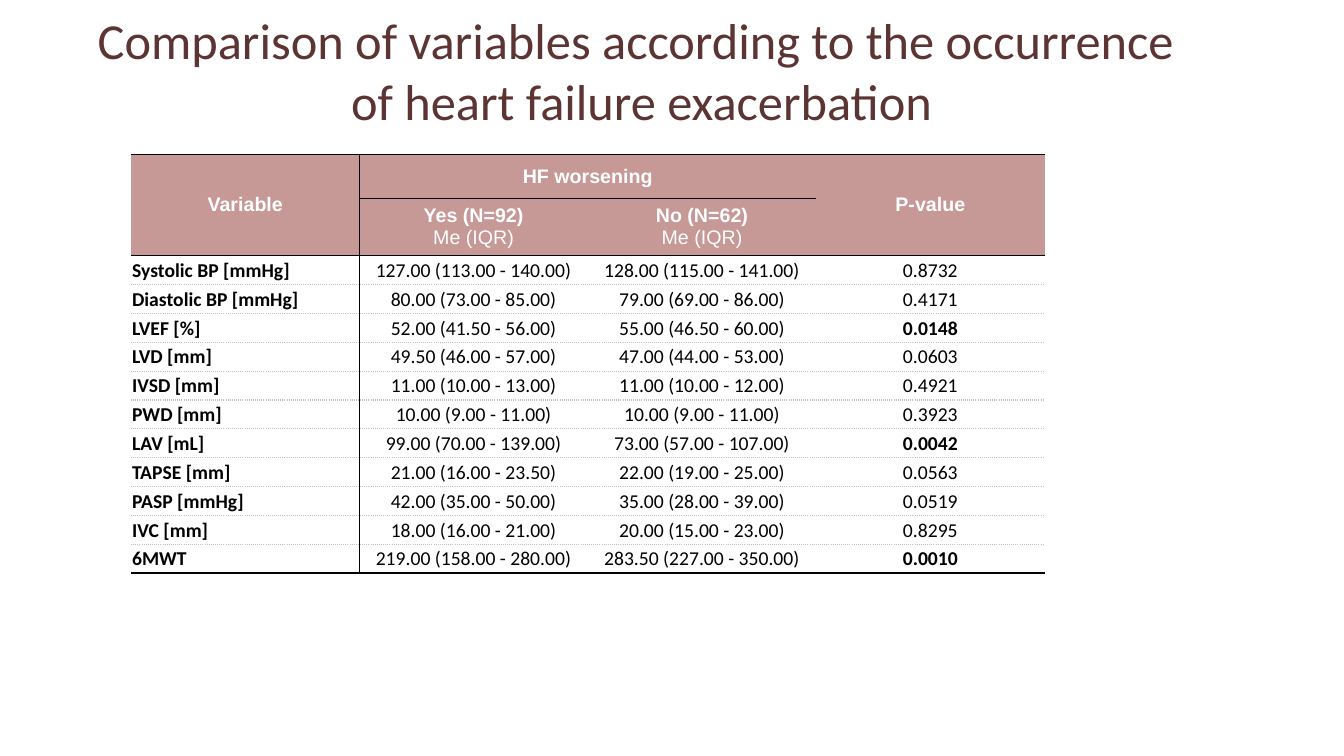
from lxml.etree import SubElement
from pptx import Presentation
from pptx.dml.color import RGBColor
from pptx.enum.text import MSO_ANCHOR, PP_ALIGN
from pptx.oxml import parse_xml
from pptx.oxml.ns import nsdecls, qn
from pptx.util import Inches, Pt

# Content
TITLE = ("Comparison of variables according to the occurrence \v"
         "of heart failure exacerbation")
HEAD = [
    ["Variable", "HF worsening", "", "P-value"],
    ["", "Yes (N=92)\nMe (IQR)", "No (N=62)\nMe (IQR)", ""],
]
MERGES = [((0, 0), (1, 0)), ((0, 1), (0, 2)), ((0, 3), (1, 3))]
BODY = [
    ["Systolic BP [mmHg]", "127.00 (113.00 - 140.00)", "128.00 (115.00 - 141.00)", "0.8732"],
    ["Diastolic BP [mmHg]", "80.00 (73.00 - 85.00)", "79.00 (69.00 - 86.00)", "0.4171"],
    ["LVEF [%]", "52.00 (41.50 - 56.00)", "55.00 (46.50 - 60.00)", "0.0148"],
    ["LVD [mm]", "49.50 (46.00 - 57.00)", "47.00 (44.00 - 53.00)", "0.0603"],
    ["IVSD [mm]", "11.00 (10.00 - 13.00)", "11.00 (10.00 - 12.00)", "0.4921"],
    ["PWD [mm]", "10.00 (9.00 - 11.00)", "10.00 (9.00 - 11.00)", "0.3923"],
    ["LAV [mL]", "99.00 (70.00 - 139.00)", "73.00 (57.00 - 107.00)", "0.0042"],
    ["TAPSE [mm]", "21.00 (16.00 - 23.50)", "22.00 (19.00 - 25.00)", "0.0563"],
    ["PASP [mmHg]", "42.00 (35.00 - 50.00)", "35.00 (28.00 - 39.00)", "0.0519"],
    ["IVC [mm]", "18.00 (16.00 - 21.00)", "20.00 (15.00 - 23.00)", "0.8295"],
    ["6MWT", "219.00 (158.00 - 280.00)", "283.50 (227.00 - 350.00)", "0.0010"],
]
LIMIT = 0.05  # p-values below this are bold

# Look
BROWN = RGBColor(0x5B, 0x34, 0x33)
ROSE = RGBColor(0xC6, 0x98, 0x96)
WHITE = RGBColor(0xFF, 0xFF, 0xFF)
BLACK = RGBColor(0x00, 0x00, 0x00)
GREY = RGBColor(0xBF, 0xBF, 0xBF)
SOLID = (BLACK, "solid")
DOTS = (GREY, "sysDot")

# Layout in inches
LEFT, TOP, WIDTH = 1.3, 1.53, 9.06
HEAD_H, BODY_H = 0.44, 3.15


def style(run, face, size, color, bold):
    font = run.font
    font.name, font.size, font.bold = face, Pt(size), bold
    font.color.rgb = color


def glow(run):
    """Give a title run its faint outline and soft shadow."""
    props = run.font._element
    props.insert(0, parse_xml(
        f'<a:ln {nsdecls("a")} w="9525"><a:solidFill><a:srgbClr val="404040">'
        '<a:alpha val="10000"/></a:srgbClr></a:solidFill></a:ln>'))
    props.insert(2, parse_xml(
        f'<a:effectLst {nsdecls("a")}><a:outerShdw blurRad="38100" dist="38100" '
        'dir="2700000" algn="tl"><a:srgbClr val="000000"><a:alpha val="43000"/>'
        '</a:srgbClr></a:outerShdw></a:effectLst>'))


def border(cell, side, look):
    line = SubElement(cell._tc.get_or_add_tcPr(), qn(f"a:ln{side}"), w=str(Pt(1)))
    if look is None:
        SubElement(line, qn("a:noFill"))
        return
    color, dash = look
    fill = SubElement(line, qn("a:solidFill"))
    SubElement(fill, qn("a:srgbClr"), val=str(color))
    SubElement(line, qn("a:prstDash"), val=dash)


def frame(cell, row, col, last):
    """Black rules around the header, the end and the first column."""
    border(cell, "L", SOLID if col == 1 else None)
    border(cell, "R", SOLID if col == 0 else None)
    border(cell, "T", SOLID if row <= len(HEAD) else DOTS)
    border(cell, "B", SOLID if row < len(HEAD) or row == last else DOTS)


def fill_head(cell, text):
    cell.fill.solid()
    cell.fill.fore_color.rgb = ROSE
    cell.text_frame.text = text
    for num, para in enumerate(cell.text_frame.paragraphs):
        para.alignment = PP_ALIGN.CENTER
        for run in para.runs:
            style(run, "Arial", 14, WHITE, num == 0)


def fill_body(cell, text, col):
    cell.fill.background()
    cell.margin_left = cell.margin_right = cell.margin_top = Inches(0.01)
    cell.margin_bottom = 0
    cell.text_frame.text = text
    para = cell.text_frame.paragraphs[0]
    para.alignment = PP_ALIGN.LEFT if col == 0 else PP_ALIGN.CENTER
    bold = col == 0 or (col == 3 and float(text) < LIMIT)
    style(para.runs[0], "Calibri", 14, BLACK, bold)


def add_title(slide):
    box = slide.shapes.add_textbox(Inches(0), Inches(0.21), Inches(12.73), Inches(0.97))
    text = box.text_frame
    text.word_wrap = True
    text.vertical_anchor = MSO_ANCHOR.MIDDLE
    text.text = TITLE
    para = text.paragraphs[0]
    para.alignment = PP_ALIGN.CENTER
    for run in para.runs:
        style(run, "Calibri", 36, BROWN, False)
        glow(run)


def add_grid(slide):
    rows = HEAD + BODY
    high = HEAD_H * len(HEAD) + BODY_H
    table = slide.shapes.add_table(
        len(rows), len(rows[0]), Inches(LEFT), Inches(TOP),
        Inches(WIDTH), Inches(high)).table
    table.first_row = table.horz_banding = False
    for col in table.columns:
        col.width = Inches(WIDTH / len(rows[0]))
    for r, texts in enumerate(rows):
        is_head = r < len(HEAD)
        table.rows[r].height = Inches(HEAD_H if is_head else BODY_H / len(BODY))
        for c, text in enumerate(texts):
            cell = table.cell(r, c)
            cell.vertical_anchor = MSO_ANCHOR.MIDDLE
            frame(cell, r, c, len(rows) - 1)
            if is_head:
                fill_head(cell, text)
            else:
                fill_body(cell, text, c)
    for start, end in MERGES:
        table.cell(*start).merge(table.cell(*end))


def main():
    deck = Presentation()
    deck.slide_width, deck.slide_height = Inches(13.33), Inches(7.5)
    slide = deck.slides.add_slide(deck.slide_layouts[6])
    add_title(slide)
    add_grid(slide)
    deck.save("out.pptx")


if __name__ == "__main__":
    main()
